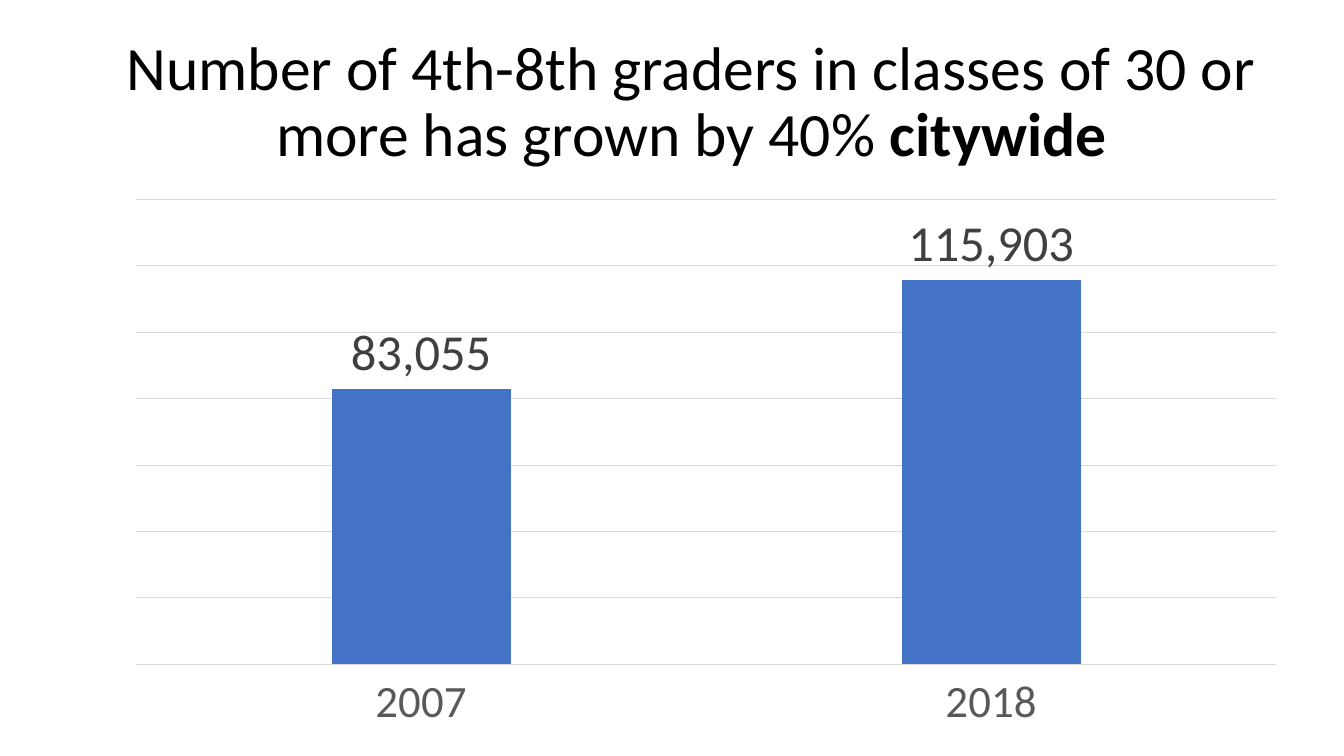
from lxml.etree import SubElement
from pptx import Presentation
from pptx.chart.data import CategoryChartData
from pptx.dml.color import RGBColor
from pptx.enum.chart import XL_CHART_TYPE, XL_LABEL_POSITION, XL_TICK_LABEL_POSITION, XL_TICK_MARK
from pptx.enum.text import MSO_ANCHOR, PP_ALIGN
from pptx.oxml.ns import qn
from pptx.util import Inches, Pt

TITLE_RUNS = [
    ("Number of 4th-8th graders in classes of 30 or more has grown by 40% ", False),
    ("citywide", True),
]
STUDENTS_BY_YEAR = {"2007": 83055, "2018": 115903}
SERIES_NAME = "Series 1"

SLIDE_SIZE = (13.33, 7.5)
TITLE_BOX = (1.11, 0.3, 11.5, 1.45)
CHART_BOX = (1.11, 1.89, 11.78, 5.41)
PLOT_BOX = (1.35, 1.98, 11.31, 4.61)

THEME = {
    "font": "Calibri",
    "title": {"size": 44, "color": "000000"},
    "chart": {"size": 10, "color": "000000"},
    "category": {"size": 32, "color": "595959"},
    "label": {"size": 36, "color": "404040"},
    "bar": "4472C4",
    "grid": "D9D9D9",
    "grid_width": 0.75,
}


def set_values(target, values):
    for name, value in values.items():
        setattr(target, name, value)


def style_font(font, role, bold=False):
    style = THEME[role]
    set_values(font, {"name": THEME["font"], "size": Pt(style["size"]), "bold": bold})
    font.color.rgb = RGBColor.from_string(style["color"])


def style_line(line):
    line.color.rgb = RGBColor.from_string(THEME["grid"])
    line.width = Pt(THEME["grid_width"])


def add_title(slide):
    frame = slide.shapes.add_textbox(*map(Inches, TITLE_BOX)).text_frame
    set_values(frame, {"word_wrap": True, "vertical_anchor": MSO_ANCHOR.MIDDLE})
    paragraph = frame.paragraphs[0]
    set_values(paragraph, {"alignment": PP_ALIGN.CENTER, "line_spacing": 0.9})
    for text, bold in TITLE_RUNS:
        run = paragraph.add_run()
        run.text = text
        style_font(run.font, "title", bold)


def place_plot(chart):
    plot_area = chart.plots[0]._element.getparent()
    layout = plot_area.find(qn("c:layout"))
    if layout is None:
        layout = SubElement(plot_area, qn("c:layout"))
        plot_area.insert(0, layout)
    manual = SubElement(layout, qn("c:manualLayout"))
    left, top, width, height = PLOT_BOX
    chart_left, chart_top, chart_width, chart_height = CHART_BOX
    settings = {
        "layoutTarget": "inner",
        "xMode": "edge",
        "yMode": "edge",
        "x": (left - chart_left) / chart_width,
        "y": (top - chart_top) / chart_height,
        "w": width / chart_width,
        "h": height / chart_height,
    }
    for name, value in settings.items():
        SubElement(manual, qn(f"c:{name}")).set("val", str(value))


def add_student_chart(slide):
    data = CategoryChartData(number_format="#,##0")
    data.categories = list(STUDENTS_BY_YEAR)
    data.add_series(SERIES_NAME, list(STUDENTS_BY_YEAR.values()))
    chart = slide.shapes.add_chart(
        XL_CHART_TYPE.COLUMN_CLUSTERED, *map(Inches, CHART_BOX), data
    ).chart
    set_values(chart, {"has_legend": False, "has_title": False})
    style_font(chart.font, "chart")

    plot = chart.plots[0]
    set_values(plot, {"gap_width": 219, "overlap": -27, "vary_by_categories": False,
                      "has_data_labels": True})
    fill = plot.series[0].format.fill
    fill.solid()
    fill.fore_color.rgb = RGBColor.from_string(THEME["bar"])
    set_values(plot.data_labels, {
        "show_value": True,
        "number_format": "#,##0",
        "number_format_is_linked": False,
        "position": XL_LABEL_POSITION.OUTSIDE_END,
    })
    style_font(plot.data_labels.font, "label")

    no_ticks = {"major_tick_mark": XL_TICK_MARK.NONE, "minor_tick_mark": XL_TICK_MARK.NONE}
    set_values(chart.category_axis, no_ticks)
    chart.category_axis.tick_label_position = XL_TICK_LABEL_POSITION.LOW
    style_font(chart.category_axis.tick_labels.font, "category")
    style_line(chart.category_axis.format.line)
    set_values(chart.value_axis, {
        **no_ticks,
        "visible": False,
        "minimum_scale": 0,
        "maximum_scale": 140000,
        "major_unit": 20000,
        "has_major_gridlines": True,
    })
    style_line(chart.value_axis.major_gridlines.format.line)
    place_plot(chart)


def main():
    presentation = Presentation()
    width, height = map(Inches, SLIDE_SIZE)
    set_values(presentation, {"slide_width": width, "slide_height": height})
    slide = presentation.slides.add_slide(presentation.slide_layouts[6])
    add_title(slide)
    add_student_chart(slide)
    presentation.save("out.pptx")


if __name__ == "__main__":
    main()
